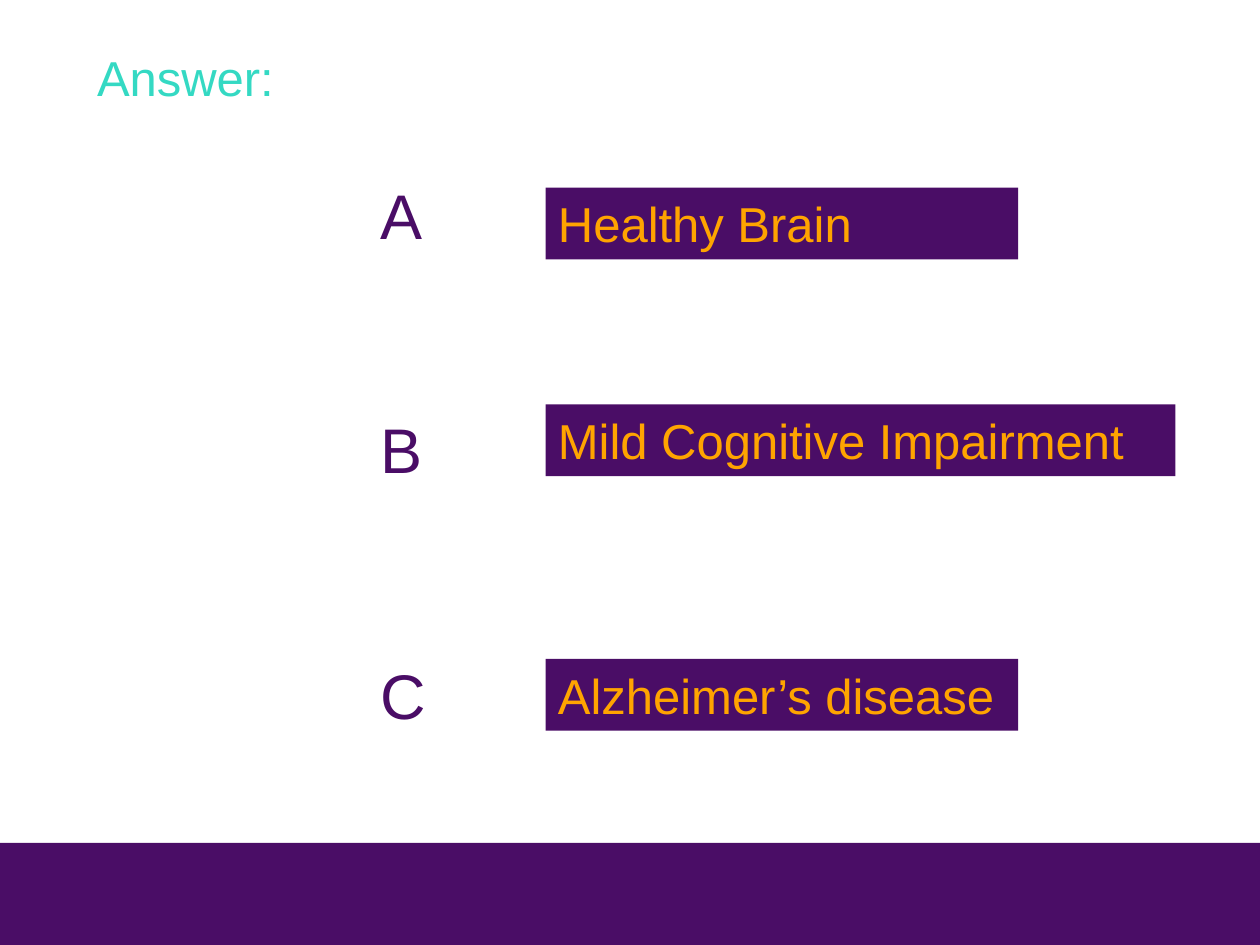
import pptx
import pptx.util
import pptx.dml.color
import pptx.enum.shapes
import pptx.enum.text

Inches = pptx.util.Inches
PURPLE, ORANGE, TEAL = "4A0D66", "FFA400", "34D9C3"

# letter, letter top, answer, bar top, bar width
ROWS = [
    ("A", 1.35, "Healthy Brain", 1.49, 3.75),
    ("B", 3.21, "Mild Cognitive Impairment", 3.21, 5),
    ("C", 5.16, "Alzheimer’s disease", 5.23, 3.75),
]


def color(code):
    return pptx.dml.color.RGBColor.from_string(code)


def write(shape, text, size, code):
    frame = shape.text_frame
    frame.word_wrap = True
    frame.auto_size = pptx.enum.text.MSO_AUTO_SIZE.NONE
    frame.vertical_anchor = pptx.enum.text.MSO_ANCHOR.TOP
    para = frame.paragraphs[0]
    para.text = text
    para.alignment = pptx.enum.text.PP_ALIGN.LEFT
    para.line_spacing = 1.0
    para.font.name = "Arial"
    para.font.size = pptx.util.Pt(size)
    para.font.color.rgb = color(code)


def add_bar(slide, left, top, width, height):
    bar = slide.shapes.add_shape(
        pptx.enum.shapes.MSO_SHAPE.RECTANGLE,
        Inches(left), Inches(top), Inches(width), Inches(height))
    bar.shadow.inherit = False
    bar.fill.solid()
    bar.fill.fore_color.rgb = color(PURPLE)
    bar.line.fill.background()
    return bar


def add_title(slide, text):
    title = slide.shapes.title
    title.left, title.top = Inches(0.67), Inches(0.33)
    title.width, title.height = Inches(1.62), Inches(0.57)
    write(title, text, 28, TEAL)


def add_label(slide, text, top):
    box = slide.shapes.add_textbox(
        Inches(2.92), Inches(top), Inches(0.71), Inches(0.71))
    write(box, text, 36, PURPLE)


def main():
    deck = pptx.Presentation()
    deck.slide_width, deck.slide_height = Inches(10), Inches(7.5)
    slide = deck.slides.add_slide(deck.slide_layouts[5])

    # Footer band and title
    add_bar(slide, 0, 6.69, 10, 0.81)
    add_title(slide, "Answer:")

    # Letters with their answers
    for letter, top, answer, bar_top, width in ROWS:
        add_label(slide, letter, top)
        write(add_bar(slide, 4.33, bar_top, width, 0.57), answer, 28, ORANGE)

    deck.save("out.pptx")


if __name__ == "__main__":
    main()
